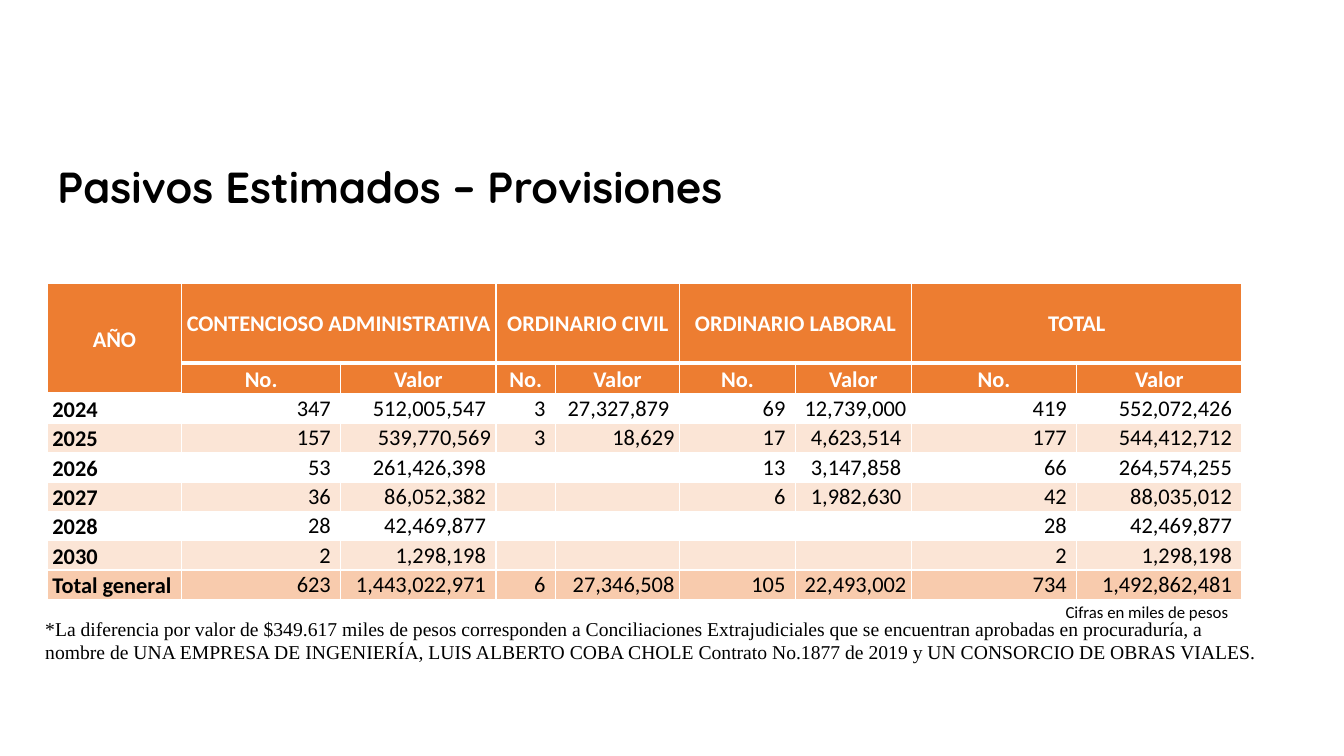
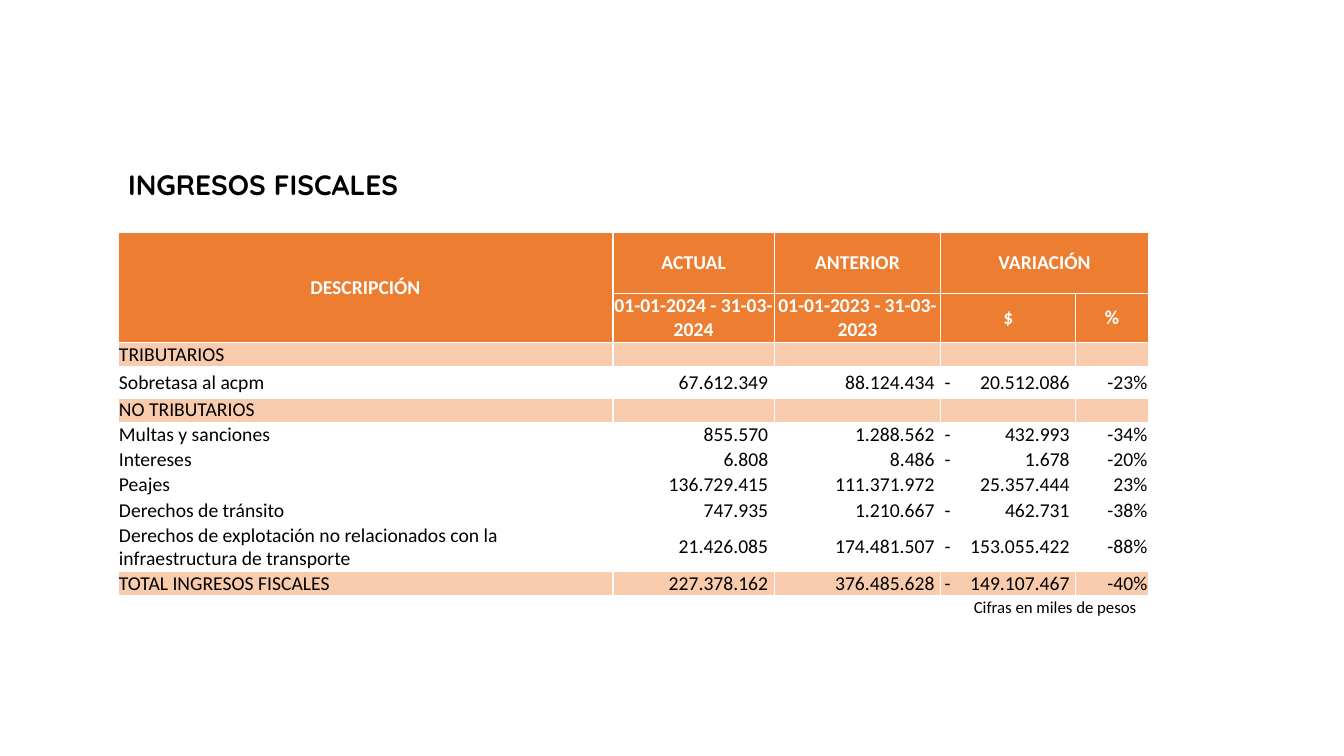
from lxml.etree import SubElement
from pptx import Presentation
from pptx.dml.color import RGBColor
from pptx.enum.text import MSO_ANCHOR as Anchor, MSO_AUTO_SIZE as AutoSize, PP_ALIGN as Align
from pptx.oxml.ns import qn
from pptx.util import Inches, Pt

ORANGE = RGBColor(0xED, 0x7D, 0x31)
PEACH = RGBColor(0xF8, 0xCB, 0xAD)
PALE_PEACH = RGBColor(0xFB, 0xE5, 0xD6)
WHITE = RGBColor(0xFF, 0xFF, 0xFF)
BLACK = RGBColor(0, 0, 0)

TITLE_FONT = "Quicksand"
TABLE_FONT = "Calibri"
NOTE_FONT = "Times New Roman"
TITLE_ONLY = 5
UNITS_NOTE = "Cifras en miles de pesos"

PROVISIONS_HEAD = [
    ["AÑO", "CONTENCIOSO ADMINISTRATIVA", "", "ORDINARIO CIVIL", "",
     "ORDINARIO LABORAL", "", "TOTAL", ""],
    [""] + ["No.", "Valor"] * 4,
]
PROVISIONS = [
    ["2024", "347", "512,005,547", "3", "27,327,879", "69", "12,739,000", "419", "552,072,426"],
    ["2025", "157", "539,770,569", "3", "18,629", "17", "4,623,514", "177", "544,412,712"],
    ["2026", "53", "261,426,398", "", "", "13", "3,147,858", "66", "264,574,255"],
    ["2027", "36", "86,052,382", "", "", "6", "1,982,630", "42", "88,035,012"],
    ["2028", "28", "42,469,877", "", "", "", "", "28", "42,469,877"],
    ["2030", "2", "1,298,198", "", "", "", "", "2", "1,298,198"],
    ["Total general", "623", "1,443,022,971", "6", "27,346,508", "105", "22,493,002",
     "734", "1,492,862,481"],
]
FLUSH_VALUES = {"539,770,569", "18,629", "27,346,508", "12,739,000", "22,493,002"}

INCOME_HEAD = [
    ["DESCRIPCIÓN", "ACTUAL", "ANTERIOR", "VARIACIÓN", ""],
    ["", "01-01-2024 - 31-03-2024", "01-01-2023 - 31-03-2023", "$", "%"],
]
INCOME = [
    ["TRIBUTARIOS", "", "", "", ""],
    ["Sobretasa al acpm", "67.612.349", "88.124.434", "-\t20.512.086", "-23%"],
    ["NO TRIBUTARIOS", "", "", "", ""],
    ["Multas y sanciones", "855.570", "1.288.562", "-\t432.993", "-34%"],
    ["Intereses", "6.808", "8.486", "-\t1.678", "-20%"],
    ["Peajes", "136.729.415", "111.371.972", "\t25.357.444", "23%"],
    ["Derechos de tránsito", "747.935", "1.210.667", "-\t462.731", "-38%"],
    ["Derechos de explotación no relacionados con la infraestructura de transporte",
     "21.426.085", "174.481.507", "-\t153.055.422", "-88%"],
    ["TOTAL INGRESOS FISCALES", "227.378.162", "376.485.628", "-\t149.107.467", "-40%"],
]


class Deck:
    def __init__(self):
        self.presentation = Presentation()
        self.presentation.slide_width = Inches(13.33)
        self.presentation.slide_height = Inches(7.5)
        self.slide = None

    def style(self, paragraph, font, size, color=BLACK, bold=False):
        paragraph.font.name = font
        paragraph.font.size = Pt(size)
        paragraph.font.bold = bold
        paragraph.font.color.rgb = color

    def new_slide(self, title, left, top, size):
        layout = self.presentation.slide_layouts[TITLE_ONLY]
        self.slide = self.presentation.slides.add_slide(layout)
        heading = self.slide.shapes.title
        heading.left, heading.top = Inches(left), Inches(top)
        heading.width, heading.height = Inches(11.5), Inches(1.45)
        frame = heading.text_frame
        frame.text = title
        frame.auto_size = AutoSize.NONE
        frame.vertical_anchor = Anchor.MIDDLE
        paragraph = frame.paragraphs[0]
        paragraph.alignment = Align.LEFT
        paragraph.line_spacing = 0.9
        self.style(paragraph, TITLE_FONT, size, bold=True)

    def note(self, text, left, top, width, height, font, size, wrap=True):
        box = self.slide.shapes.add_textbox(
            Inches(left), Inches(top), Inches(width), Inches(height))
        box.text_frame.word_wrap = wrap
        box.text_frame.text = text
        self.style(box.text_frame.paragraphs[0], font, size)

    def units_note(self, left, top):
        self.note(UNITS_NOTE, left, top, 1.84, 0.3, TABLE_FONT, 12, wrap=False)

    def table(self, left, top, widths, heights, merges):
        """Add an empty table; merges hold (first row, first column, last row, last column)."""
        table = self.slide.shapes.add_table(
            len(heights), len(widths), Inches(left), Inches(top),
            Inches(sum(widths)), Inches(sum(heights))).table
        table.first_row = table.horz_banding = False
        for column, width in zip(table.columns, widths):
            column.width = Inches(width)
        for row, height in zip(table.rows, heights):
            row.height = Inches(height)
        for first_row, first_column, last_row, last_column in merges:
            table.cell(first_row, first_column).merge(table.cell(last_row, last_column))
        return table

    def cell(self, cell, text, size, fill=None, color=BLACK, bold=False, align=Align.LEFT,
             margins=(0.05, 0.05), spacing=None, tab=None, bottom_line=1):
        cell.margin_left, cell.margin_right = map(Inches, margins)
        cell.margin_top = cell.margin_bottom = 0
        cell.vertical_anchor = Anchor.MIDDLE
        self.borders(cell, bottom_line)
        if fill is None:
            cell.fill.background()
        else:
            cell.fill.solid()
            cell.fill.fore_color.rgb = fill
        cell.text = text
        paragraph = cell.text_frame.paragraphs[0]
        paragraph.alignment = align
        if spacing:
            paragraph.line_spacing = spacing
        if tab:
            self.right_tab(paragraph, tab)
        self.style(paragraph, TABLE_FONT, size, color, bold)
        if not text:
            SubElement(paragraph._p, qn("a:endParaRPr"), sz=str(size * 100))

    def borders(self, cell, bottom_line):
        properties = cell._tc.get_or_add_tcPr()
        for side, points in (("L", 1), ("R", 1), ("T", 1), ("B", bottom_line)):
            line = SubElement(properties, qn(f"a:ln{side}"), w=str(Pt(points)))
            solid = SubElement(line, qn("a:solidFill"))
            SubElement(solid, qn("a:srgbClr"), val=str(WHITE))

    def right_tab(self, paragraph, position):
        tabs = SubElement(paragraph._p.get_or_add_pPr(), qn("a:tabLst"))
        SubElement(tabs, qn("a:tab"), pos=str(Inches(position)), algn="r")

    def header(self, table, rows, size, **options):
        for r, texts in enumerate(rows):
            for c, text in enumerate(texts):
                self.cell(table.cell(r, c), text, size, ORANGE, WHITE, True, Align.CENTER,
                          **options)
            options.pop("bottom_line", None)

    def save(self):
        self.presentation.save("out.pptx")


def provisions_slide(deck):
    deck.new_slide("Pasivos Estimados – Provisiones", 0.47, 1.15, 31)
    merges = [(0, 0, 1, 0)] + [(0, c, 0, c + 1) for c in range(1, 9, 2)]
    table = deck.table(0.47, 2.81, [1.33, 1.58, 1.54, 0.59, 1.23, 1.15, 1.15, 1.64, 1.64],
                       [0.79, 0.31] + [0.29] * len(PROVISIONS), merges)
    deck.header(table, PROVISIONS_HEAD, 16, spacing=1.07, bottom_line=3)
    for r, (year, *values) in enumerate(PROVISIONS):
        fill = PALE_PEACH if r % 2 else None
        if year == "Total general":
            fill = PEACH
        deck.cell(table.cell(r + 2, 0), year, 16, fill, bold=True, spacing=1.07)
        for c, value in enumerate(values, 1):
            right = 0.05 if value in FLUSH_VALUES else 0.1
            deck.cell(table.cell(r + 2, c), value, 16, fill, align=Align.RIGHT,
                      margins=(0.02, right))
    deck.note("*La diferencia por valor de $349.617 miles de pesos corresponden a "
              "Conciliaciones Extrajudiciales que se encuentran aprobadas en procuraduría, "
              "a nombre de UNA EMPRESA DE INGENIERÍA, LUIS ALBERTO COBA CHOLE "
              "Contrato No.1877 de 2019 y UN CONSORCIO DE OBRAS VIALES.",
              0.35, 6.07, 12.31, 0.81, NOTE_FONT, 14)
    deck.units_note(10.47, 5.92)


def income_slide(deck):
    deck.new_slide("INGRESOS FISCALES", 1.17, 1.12, 20)
    table = deck.table(1.17, 2.31, [4.91, 1.6, 1.65, 1.34, 0.72],
                       [0.6, 0.49, 0.24, 0.31, 0.24] + [0.25] * 4 + [0.48, 0.24],
                       [(0, 0, 1, 0), (0, 3, 0, 4)])
    deck.header(table, INCOME_HEAD, 14, margins=(0.01, 0.01))
    amount = {"align": Align.RIGHT, "margins": (0.01, 0.06)}
    formats = [
        {"margins": (0.01, 0.01)},
        amount,
        amount,
        {"margins": (0.04, 0.01), "tab": 1.24},
        {"align": Align.RIGHT, "margins": (0.01, 0.01)},
    ]
    for r, texts in enumerate(INCOME, 2):
        fill = PEACH if texts[0].isupper() else None
        for c, (text, options) in enumerate(zip(texts, formats)):
            deck.cell(table.cell(r, c), text, 14, fill, **options)
    deck.units_note(9.56, 5.87)


def main():
    deck = Deck()
    provisions_slide(deck)
    income_slide(deck)
    deck.save()


if __name__ == "__main__":
    main()
